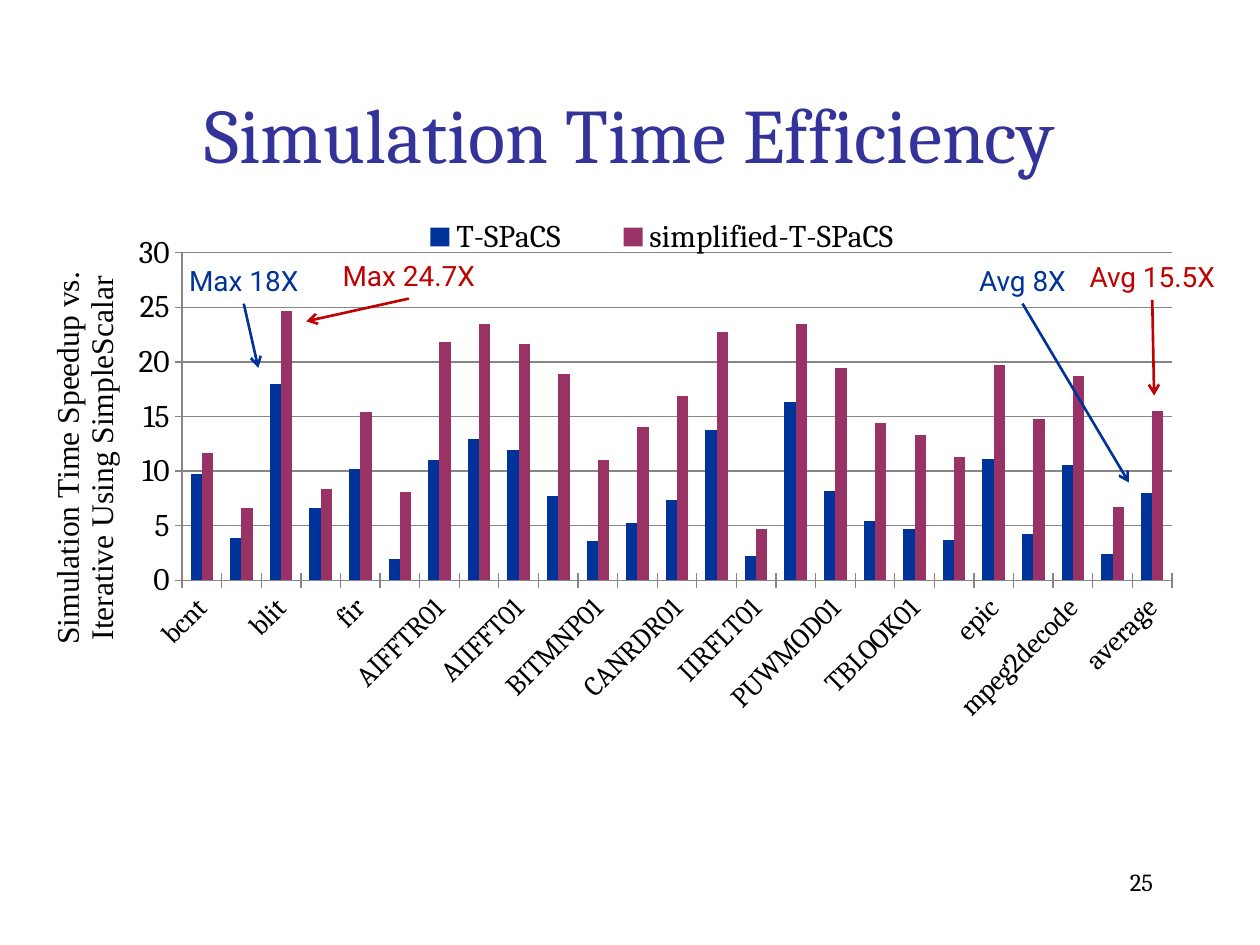
from dataclasses import dataclass

from pptx import Presentation
from pptx.chart.data import CategoryChartData
from pptx.dml.color import RGBColor
from pptx.enum.chart import XL_CHART_TYPE as ChartType
from pptx.enum.chart import XL_LEGEND_POSITION as LegendPosition
from pptx.enum.chart import XL_TICK_MARK as TickMark
from pptx.enum.shapes import MSO_CONNECTOR as Connector
from pptx.enum.text import MSO_ANCHOR as Anchor
from pptx.enum.text import PP_ALIGN as Align
from pptx.oxml import parse_xml
from pptx.oxml.ns import nsdecls
from pptx.util import Inches, Pt

COLORS = {"title": "333399", "text": "000000", "blue": "003399",
          "plum": "993366", "red": "C00000", "grid": "868686"}
SERIF = "Cambria"
SANS = "Roboto"

CATEGORIES = (
    "bcnt bilv blit brev fir A2TIME01 AIFFTR01 AIFIRF01 AIIFFT01 BaseFP01 "
    "BITMNP01 CACHEB01 CANRDR01 IDCTRN01 IIRFLT01 PNTRCH01 PUWMOD01 RSPEED01 "
    "TBLOOK01 TTSPRK01 epic jpegencode mpeg2decode pegwitencode average"
).split()


@dataclass
class Series:
    name: str
    color: str
    values: list[float]


@dataclass
class Callout:
    """A label with an arrow from its bottom centre to a bar."""
    text: str
    color: str
    left: float
    top: float
    width: float
    tip: tuple[float, float]


SERIES = [
    Series("T-SPaCS", "blue",
           [9.7, 3.9, 18, 6.6, 10.2, 1.9, 11, 12.9, 11.9, 7.7, 3.6, 5.2, 7.3,
            13.8, 2.2, 16.3, 8.2, 5.4, 4.7, 3.7, 11.1, 4.2, 10.6, 2.4, 8]),
    Series("simplified-T-SPaCS", "plum",
           [11.7, 6.6, 24.7, 8.4, 15.4, 8.1, 21.8, 23.5, 21.6, 18.9, 11, 14,
            16.9, 22.7, 4.7, 23.5, 19.4, 14.4, 13.3, 11.3, 19.7, 14.8, 18.7,
            6.7, 15.5]),
]

CALLOUTS = [
    Callout("Max 18X", "blue", 1.22, 2.04, 1.43, (2.05, 2.92)),
    Callout("Avg 8X", "blue", 7.46, 2.04, 1.31, (8.96, 3.83)),
    Callout("Max 24.7X", "red", 2.53, 2.0, 1.43, (2.43, 2.55)),
    Callout("Avg 15.5X", "red", 8.49, 2.01, 1.31, (9.16, 3.14)),
]


def rgb(name: str) -> RGBColor:
    return RGBColor.from_string(COLORS[name])


def style_font(font, size: float, face: str = SERIF, color: str = "text") -> None:
    font.size = Pt(size)
    font.name = face
    font.bold = False
    font.color.rgb = rgb(color)


def add_text(page, text: str, left: float, top: float, width: float,
             height: float, *, size: float, face: str = SERIF,
             color: str = "text", align=Align.CENTER, anchor=Anchor.MIDDLE):
    box = page.shapes.add_textbox(Inches(left), Inches(top),
                                  Inches(width), Inches(height))
    frame = box.text_frame
    frame.word_wrap = True
    frame.vertical_anchor = anchor
    para = frame.paragraphs[0]
    para.alignment = align
    span = para.add_run()
    span.text = text
    style_font(span.font, size, face, color)
    return box


def add_callout(page, callout: Callout) -> None:
    box = add_text(page, callout.text, callout.left, callout.top,
                   callout.width, 0.37, size=16, face=SANS, color=callout.color)
    tip_x, tip_y = (Inches(value) for value in callout.tip)
    arrow = page.shapes.add_connector(Connector.STRAIGHT, box.left, box.top,
                                      tip_x, tip_y)
    arrow.begin_connect(box, 2)
    arrow.line.color.rgb = rgb(callout.color)
    arrow.line.width = Pt(1.5)
    arrow.line._get_or_add_ln().append(
        parse_xml(f'<a:tailEnd {nsdecls("a")} type="arrow"/>'))
    arrow._element.spPr.append(parse_xml(f'<a:effectLst {nsdecls("a")}/>'))


def layout_xml(inner: bool = False, **fractions: float):
    """Manual chart layout; fractions are x, y and optionally w, h."""
    target = '<c:layoutTarget val="inner"/>' if inner else ""
    modes = '<c:xMode val="edge"/><c:yMode val="edge"/>'
    sizes = "".join(f'<c:{key} val="{value}"/>' for key, value in fractions.items())
    return parse_xml(f'<c:layout {nsdecls("c")}><c:manualLayout>'
                     f'{target}{modes}{sizes}</c:manualLayout></c:layout>')


def set_layout(parent, after: str, layout) -> None:
    """Place the layout right after the named child, or first if there is none."""
    for old in parent.findall(layout.tag):
        parent.remove(old)
    found = parent.xpath(f"c:{after}")
    if found:
        found[-1].addnext(layout)
    else:
        parent.insert(0, layout)


def add_speedup_chart(page) -> None:
    data = CategoryChartData()
    data.categories = CATEGORIES
    for series in SERIES:
        data.add_series(series.name, series.values)
    chart = page.shapes.add_chart(
        ChartType.COLUMN_CLUSTERED, Inches(0.24), Inches(1.65),
        Inches(9.2), Inches(4.64), data).chart
    style_font(chart.font, 18)
    chart.has_title = False

    # Bars
    plot = chart.plots[0]
    plot.gap_width = 150
    plot.overlap = 0
    plot.vary_by_categories = False
    for bars, series in zip(plot.series, SERIES):
        bars.format.fill.solid()
        bars.format.fill.fore_color.rgb = rgb(series.color)
    set_layout(chart._chartSpace.chart.plotArea, "none",
               layout_xml(inner=True, x=0.131, y=0.077, w=0.854, h=0.56))

    # Axes
    category_axis, value_axis = chart.category_axis, chart.value_axis
    for axis, size in ((category_axis, 16), (value_axis, 18)):
        axis.major_tick_mark = TickMark.CROSS if axis is value_axis else TickMark.OUTSIDE
        axis.minor_tick_mark = TickMark.NONE
        axis.format.line.color.rgb = rgb("grid")
        style_font(axis.tick_labels.font, size)
    category_axis.major_tick_mark = TickMark.CROSS
    category_axis._element.txPr.bodyPr.set("rot", "-2700000")
    category_axis._element.xpath("c:noMultiLvlLbl")[0].addprevious(
        parse_xml(f'<c:tickLblSkip {nsdecls("c")} val="2"/>'))
    value_axis.minimum_scale, value_axis.maximum_scale = 0, 30
    value_axis.major_unit = 5
    value_axis.has_major_gridlines = True
    value_axis.major_gridlines.format.line.color.rgb = rgb("grid")

    # Value axis title
    title = value_axis.axis_title
    para = title.text_frame.paragraphs[0]
    span = para.add_run()
    span.text = "Simulation Time Speedup vs. Iterative Using SimpleScalar"
    style_font(span.font, 18, "Times New Roman")
    title.text_frame._txBody.bodyPr.set("rot", "-5400000")
    title.text_frame._txBody.bodyPr.set("vert", "horz")
    set_layout(title._element, "tx", layout_xml(x=0.01, y=0.1))

    # Legend
    chart.has_legend = True
    legend = chart.legend
    legend.position = LegendPosition.TOP
    legend.include_in_layout = False
    style_font(legend.font, 18)
    set_layout(legend._element, "legendPos",
               layout_xml(x=0.3, y=0.01, w=0.49, h=0.08))


def main() -> None:
    deck = Presentation()
    deck.slide_width, deck.slide_height = Inches(10), Inches(7.5)
    page = deck.slides.add_slide(deck.slide_layouts[6])

    # Title and page number
    add_text(page, "Simulation Time Efficiency", 0.75, 0.43, 8.5, 1.25,
             size=44, color="title")
    add_text(page, "25", 7.17, 6.83, 2.08, 0.5, size=14,
             align=Align.RIGHT, anchor=Anchor.TOP)

    # Chart with its callouts
    add_speedup_chart(page)
    for callout in CALLOUTS:
        add_callout(page, callout)

    deck.save("out.pptx")


if __name__ == "__main__":
    main()
